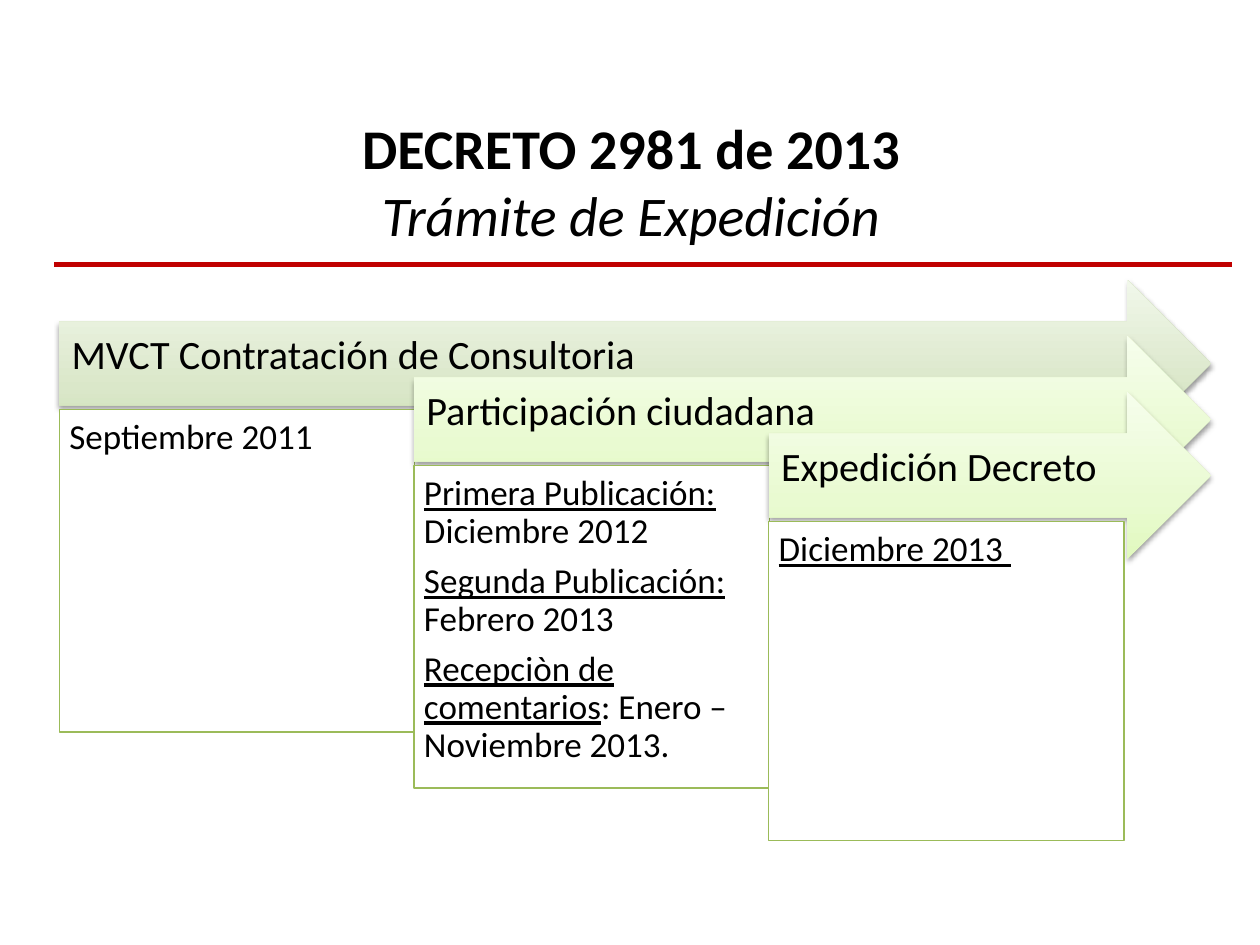
from lxml import etree
from pptx import Presentation
from pptx.dml.color import RGBColor
from pptx.enum.shapes import MSO_CONNECTOR, MSO_SHAPE
from pptx.enum.text import MSO_ANCHOR, PP_ALIGN
from pptx.oxml import parse_xml
from pptx.oxml.ns import nsdecls, qn
from pptx.util import Inches, Pt

ARROW, RECT = MSO_SHAPE.RIGHT_ARROW, MSO_SHAPE.RECTANGLE
LINE = MSO_CONNECTOR.STRAIGHT
TOP, MIDDLE = MSO_ANCHOR.TOP, MSO_ANCHOR.MIDDLE
LEFT, CENTER = PP_ALIGN.LEFT, PP_ALIGN.CENTER

COLORS = {"text": "000000", "rule": "C00000",
          "paper": "FFFFFF", "edge": "9BBB59"}
SAGE = ["CCDFB1", "DAE7C9", "F1F7EA"]
LIME = ["E1F9BE", "E9FAD1", "F6FEEC"]


def write(shape, paras, size, pads, anchor, after):
    """Fill a shape with paragraphs of (text, underlined) runs."""
    frame = shape.text_frame
    frame.word_wrap = True
    frame.vertical_anchor = anchor
    (frame.margin_left, frame.margin_top,
     frame.margin_right, frame.margin_bottom) = [Inches(p) for p in pads]
    for i, runs in enumerate(paras):
        para = frame.add_paragraph() if i else frame.paragraphs[0]
        para.alignment = LEFT
        para.line_spacing = 0.9
        para.space_after = Pt(after)
        for text, under in runs:
            run = para.add_run()
            run.text = text
            run.font.name = "Calibri"
            run.font.size = Pt(size)
            run.font.underline = under
            run.font.color.rgb = RGBColor.from_string(COLORS["text"])


def shade(shape):
    """Give a shape a soft shadow that falls straight down."""
    shape.shadow.inherit = False
    effects = shape._element.spPr.find(qn("a:effectLst"))
    effects.append(parse_xml(
        f'<a:outerShdw {nsdecls("a")} blurRad="{Pt(3.1)}" dist="{Pt(1.6)}" '
        'dir="5400000" rotWithShape="0"><a:srgbClr val="000000">'
        '<a:alpha val="38000"/></a:srgbClr></a:outerShdw>'))


deck = Presentation()
deck.slide_width, deck.slide_height = Inches(10), Inches(7.5)
slide = deck.slides.add_slide(deck.slide_layouts[6])
shapes = slide.shapes

# Title
title = shapes.add_textbox(Inches(0.51), Inches(0.81), Inches(9), Inches(1.25))
title.text_frame.word_wrap = True
title.text_frame.vertical_anchor = MIDDLE
para = title.text_frame.paragraphs[0]
para.alignment = CENTER
for text, bold in [("DECRETO 2981 de 2013", True),
                   ("Trámite de Expedición", False)]:
    run = para.add_run()
    run.text = text
    run.font.name = "Calibri"
    run.font.size = Pt(32)
    run.font.bold = bold
    run.font.italic = not bold
    run.font.color.rgb = RGBColor.from_string(COLORS["text"])
    if bold:
        para.add_line_break()

# Red rule
rule = shapes.add_connector(LINE, Inches(0.43), Inches(2.1),
                            Inches(9.78), Inches(2.1))
rule.line.color.rgb = RGBColor.from_string(COLORS["rule"])
rule.line.width = Pt(3)
etree.SubElement(rule._element.spPr, qn("a:effectLst"))

# Steps: each arrow starts further right and lower, all end at one edge
steps = [
    ("MVCT Contratación de Consultoria", SAGE, 2.56,
     [[("Septiembre 2011", False)]]),
    ("Participación ciudadana", LIME, 2.56,
     [[("Primera Publicación: ", True), ("Diciembre 2012", False)],
      [("Segunda Publicación:", True), (" Febrero 2013", False)],
      [("Recepciòn de comentarios", True),
       (": Enero – Noviembre 2013.", False)]]),
    ("Expedición Decreto", LIME, 2.53, [[("Diciembre 2013 ", True)]]),
]
EDGE = 9.61
for i, (head, tones, tall, paras) in enumerate(steps):
    x = 0.47 + 2.815 * i
    y = 2.22 + 0.445 * i

    arrow = shapes.add_shape(ARROW, Inches(x), Inches(y),
                             Inches(EDGE - x), Inches(1.33))
    arrow.line.fill.background()
    shade(arrow)
    arrow.fill.gradient()
    arrow.fill.gradient_angle = 90
    stops = arrow._element.spPr.find(qn("a:gradFill")).find(qn("a:gsLst"))
    for stop in list(stops):
        stops.remove(stop)
    for pos, tone in zip([0, 35, 100], tones):
        stop = etree.SubElement(stops, qn("a:gs"), pos=str(pos * 1000))
        etree.SubElement(stop, qn("a:srgbClr"), val=tone)
    write(arrow, [[(head, False)]], 23, [0.1, 0.1, 0.28, 0.21], MIDDLE, 8)

    card = shapes.add_shape(RECT, Inches(x), Inches(y + 1.03),
                            Inches(2.82), Inches(tall))
    card.shadow.inherit = False
    card.fill.solid()
    card.fill.fore_color.rgb = RGBColor.from_string(COLORS["paper"])
    card.line.color.rgb = RGBColor.from_string(COLORS["edge"])
    card.line.width = Pt(0.75)
    write(card, paras, 20, [0.08] * 4, TOP, 7)

deck.save("out.pptx")
